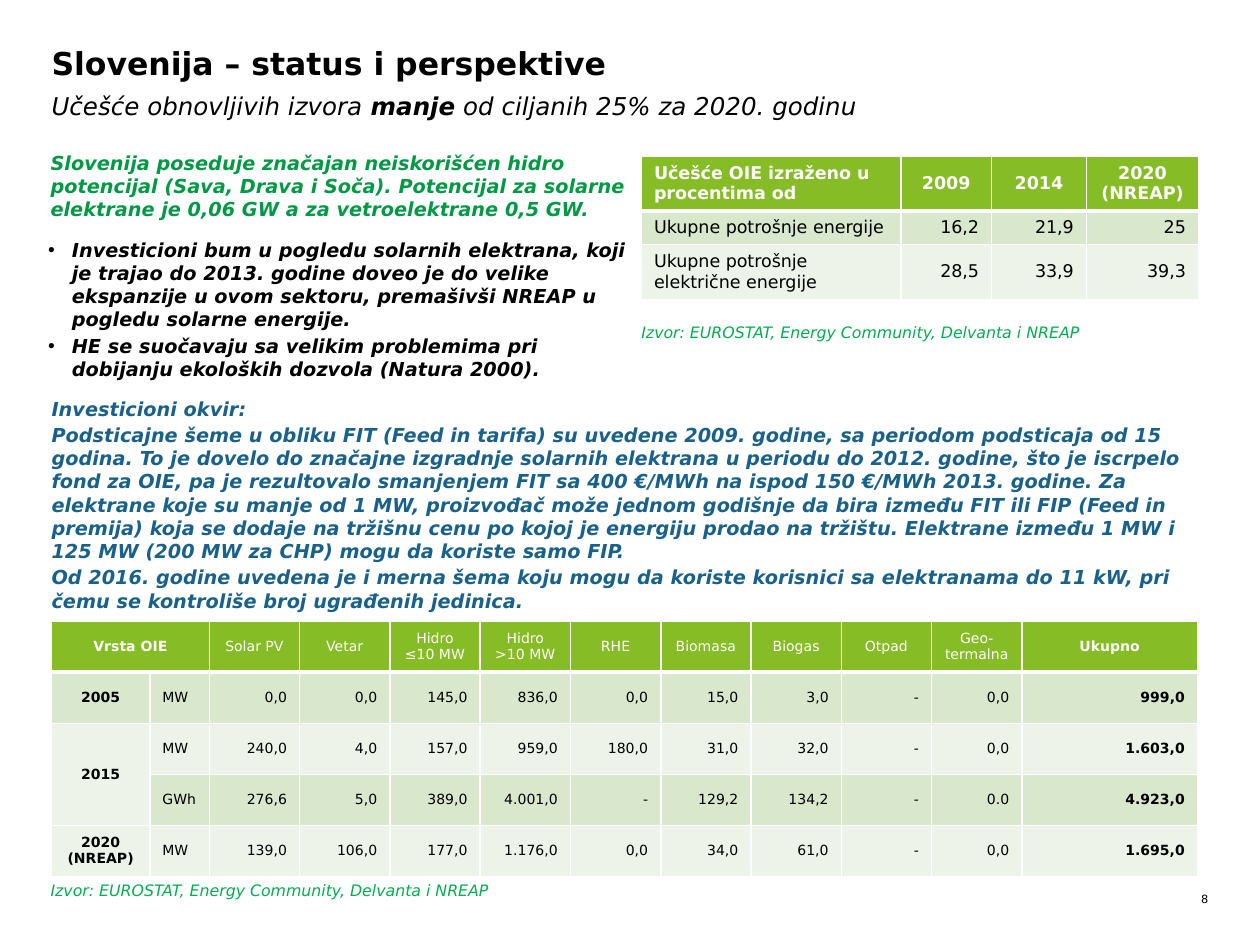
from dataclasses import dataclass

from lxml import etree
from pptx import Presentation, util as u
from pptx.dml.color import RGBColor
from pptx.enum import text
from pptx.oxml import ns

FONT = "DejaVu Sans"
COLORS = {
    "black": "000000",
    "white": "FFFFFF",
    "header": "86BC25",
    "band": "D9E7CD",
    "pale": "EDF3E8",
    "source": "00B050",
    "intro": "009A44",
    "framework": "17618C",
}
LEFT, CENTER, RIGHT = text.PP_ALIGN.LEFT, text.PP_ALIGN.CENTER, text.PP_ALIGN.RIGHT
SOURCE = "Izvor: EUROSTAT, Energy Community, Delvanta i NREAP"


@dataclass
class Run:
    words: str
    bold: bool = False


@dataclass
class TextBlock:
    left: float
    top: float
    width: float
    height: float
    paragraphs: list[list[Run]]
    size: float
    color: str = "black"
    italic: bool = True
    align: text.PP_ALIGN = LEFT
    bullet: bool = False


@dataclass
class Grid:
    left: float
    top: float
    columns: list[float]
    rows: list[float]
    cells: list[list[str]]
    size: float
    label_columns: int
    bold_headers: set[int]
    bold_columns: set[int]
    centered_columns: set[int]
    merges: list[tuple[int, int, int, int]]


def add_run(paragraph, words: str, size: float, color: str, bold: bool, italic: bool = False) -> None:
    run = paragraph.add_run()
    run.text = words
    run.font.name = FONT
    run.font.size = u.Pt(size)
    run.font.bold = bold
    run.font.italic = italic
    run.font.color.rgb = RGBColor.from_string(COLORS[color])


def add_bullet(paragraph) -> None:
    properties = paragraph._p.get_or_add_pPr()
    indent = u.Cm(0.48)
    properties.set("marL", str(indent))
    properties.set("indent", str(-indent))
    etree.SubElement(properties, ns.qn("a:buFont"), typeface="Arial")
    etree.SubElement(properties, ns.qn("a:buChar"), char="•")


def add_text_block(slide, block: TextBlock) -> None:
    shape = slide.shapes.add_textbox(
        u.Cm(block.left), u.Cm(block.top), u.Cm(block.width), u.Cm(block.height)
    )
    frame = shape.text_frame
    frame.word_wrap = True
    frame.margin_left = frame.margin_right = frame.margin_top = frame.margin_bottom = 0
    for index, runs in enumerate(block.paragraphs):
        paragraph = frame.add_paragraph() if index else frame.paragraphs[0]
        if block.bullet:
            add_bullet(paragraph)
        paragraph.alignment = block.align
        if index:
            paragraph.space_before = u.Pt(2)
        for run in runs:
            add_run(paragraph, run.words, block.size, block.color, run.bold, block.italic)


def add_borders(cell, top: float, bottom: float) -> None:
    properties = cell._tc.get_or_add_tcPr()
    for side, width in (("L", 1), ("R", 1), ("T", top), ("B", bottom)):
        line = etree.SubElement(properties, ns.qn(f"a:ln{side}"), w=str(u.Pt(width)))
        fill = etree.SubElement(line, ns.qn("a:solidFill"))
        etree.SubElement(fill, ns.qn("a:srgbClr"), val=COLORS["white"])


def add_grid(slide, grid: Grid) -> None:
    frame = slide.shapes.add_table(
        len(grid.rows), len(grid.columns), u.Cm(grid.left), u.Cm(grid.top),
        u.Cm(sum(grid.columns)), u.Cm(sum(grid.rows)),
    )
    table = frame.table
    table.first_row = table.horz_banding = False
    for column, width in zip(table.columns, grid.columns):
        column.width = u.Cm(width)
    for row, height in zip(table.rows, grid.rows):
        row.height = u.Cm(height)
    for row_index, values in enumerate(grid.cells):
        header = row_index == 0
        fill = "header" if header else ("band" if row_index % 2 else "pale")
        for column_index, value in enumerate(values):
            cell = table.cell(row_index, column_index)
            add_borders(cell, 3 if row_index == 1 else 1, 3 if header else 1)
            cell.fill.solid()
            cell.fill.fore_color.rgb = RGBColor.from_string(COLORS[fill])
            cell.vertical_anchor = text.MSO_ANCHOR.MIDDLE
            if not value:
                continue
            centered = column_index in grid.centered_columns or (header and column_index)
            label = column_index < grid.label_columns
            bold = column_index in (grid.bold_headers if header else grid.bold_columns)
            for index, words in enumerate(value.split("\n")):
                paragraph = cell.text_frame.add_paragraph() if index else cell.text_frame.paragraphs[0]
                paragraph.alignment = CENTER if centered else LEFT if label else RIGHT
                add_run(paragraph, words, grid.size, "white" if header else "black", bold)
    for first_row, first_column, last_row, last_column in grid.merges:
        table.cell(first_row, first_column).merge(table.cell(last_row, last_column))


TEXT_BLOCKS = [
    TextBlock(23.72, 17.98, 0.64, 0.28, [[Run("8")]], 6.5, italic=False, align=RIGHT),
    TextBlock(1.04, 0.89, 23.14, 1.02, [[Run("Slovenija – status i perspektive", True)]], 18, italic=False),
    TextBlock(1.04, 1.83, 16.89, 0.61, [[
        Run("Učešće obnovljivih izvora "),
        Run("manje", True),
        Run(" od ciljanih 25% za 2020. godinu"),
    ]], 14),
    TextBlock(1.02, 3.05, 11.66, 1.42, [[Run(
        "Slovenija poseduje značajan neiskorišćen hidro potencijal (Sava, Drava i Soča). "
        "Potencijal za solarne elektrane je 0,06 GW a za vetroelektrane 0,5 GW.", True,
    )]], 11, "intro"),
    TextBlock(0.97, 4.8, 11.66, 2.9, [
        [Run("Investicioni bum u pogledu solarnih elektrana, koji je trajao do 2013. godine doveo je "
             "do velike ekspanzije u ovom sektoru, premašivši NREAP u pogledu solarne energije.", True)],
        [Run("HE se suočavaju sa velikim problemima pri dobijanju ekoloških dozvola (Natura 2000).", True)],
    ], 11, bullet=True),
    TextBlock(12.93, 6.5, 9.32, 0.38, [[Run(SOURCE)]], 9, "source"),
    TextBlock(1.04, 8, 23.06, 4.37, [
        [Run("Investicioni okvir:", True)],
        [Run("Podsticajne šeme u obliku FIT (Feed in tarifa) su uvedene 2009. godine, sa periodom "
             "podsticaja od 15 godina. To je dovelo do značajne izgradnje solarnih elektrana u periodu "
             "do 2012. godine, što je iscrpelo fond za OIE, pa je rezultovalo smanjenjem FIT sa "
             "400 €/MWh na ispod 150 €/MWh 2013. godine. Za elektrane koje su manje od 1 MW, proizvođač "
             "može jednom godišnje da bira između FIT ili FIP (Feed in premija) koja se dodaje na "
             "tržišnu cenu po kojoj je energiju prodao na tržištu. Elektrane između 1 MW i 125 MW "
             "(200 MW za CHP) mogu da koriste samo FIP.", True)],
        [Run("Od 2016. godine uvedena je i merna šema koju mogu da koriste korisnici sa elektranama "
             "do 11 kW, pri čemu se kontroliše broj ugrađenih jedinica.", True)],
    ], 11, "framework"),
    TextBlock(1.02, 17.75, 9.32, 0.38, [[Run(SOURCE)]], 9, "source"),
]

SHARE_GRID = Grid(
    12.93, 3.15, [5.23, 1.83, 1.91, 2.26], [1.04, 0.66, 0.86],
    [
        ["Učešće OIE izraženo u procentima od", "2009", "2014", "2020 (NREAP)"],
        ["Ukupne potrošnje energije", "16,2", "21,9", "25"],
        ["Ukupne potrošnje električne energije", "28,5", "33,9", "39,3"],
    ],
    10, 1, {0, 1, 2, 3}, set(), set(), [],
)

CAPACITY_GRID = Grid(
    1.04, 12.52, [1.98, 1.2] + [1.82] * 9 + [3.54], [1.03] * 5,
    [
        ["Vrsta OIE", "", "Solar PV", "Vetar", "Hidro\n≤10 MW", "Hidro\n>10 MW", "RHE", "Biomasa",
         "Biogas", "Otpad", "Geo-termalna", "Ukupno"],
        ["2005", "MW", "0,0", "0,0", "145,0", "836,0", "0,0", "15,0", "3,0", "-", "0,0", "999,0"],
        ["2015", "MW", "240,0", "4,0", "157,0", "959,0", "180,0", "31,0", "32,0", "-", "0,0", "1.603,0"],
        ["", "GWh", "276,6", "5,0", "389,0", "4.001,0", "-", "129,2", "134,2", "-", "0.0", "4.923,0"],
        ["2020\n(NREAP)", "MW", "139,0", "106,0", "177,0", "1.176,0", "0,0", "34,0", "61,0", "-", "0,0",
         "1.695,0"],
    ],
    8, 2, {0, 11}, {0, 11}, {0}, [(0, 0, 0, 1), (2, 0, 3, 0)],
)


def main() -> None:
    presentation = Presentation()
    presentation.slide_width = u.Cm(25.4)
    presentation.slide_height = u.Cm(19.05)
    slide = presentation.slides.add_slide(presentation.slide_layouts[6])
    for block in TEXT_BLOCKS:
        add_text_block(slide, block)
    for grid in (SHARE_GRID, CAPACITY_GRID):
        add_grid(slide, grid)
    presentation.save("out.pptx")


if __name__ == "__main__":
    main()
